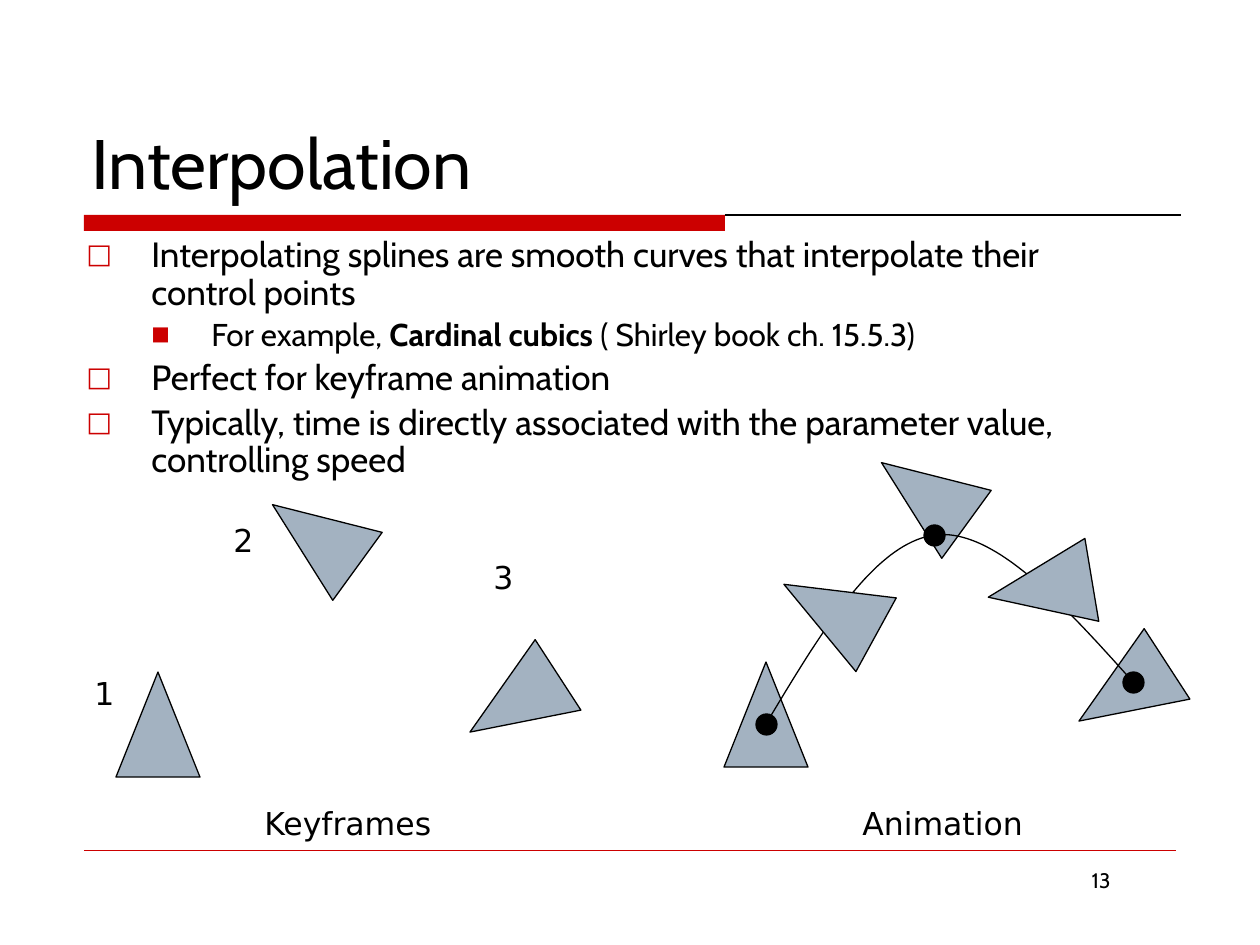
from lxml import etree
from pptx import Presentation
from pptx import util as u
from pptx.dml.color import RGBColor
from pptx.enum import shapes, text
from pptx.oxml.ns import qn

SCALE = 914400 / 126  # EMU per px
BLACK = RGBColor(0x00, 0x00, 0x00)
RED = RGBColor(0xCC, 0x00, 0x00)
STEEL = RGBColor(0xA3, 0xB2, 0xC1)


def emu(*lengths):
    return [u.Emu(round(px * SCALE)) for px in lengths]


def add_text(place, words, size, font, wrap=True):
    box = page.shapes.add_textbox(*emu(*place))
    box.text_frame.word_wrap = wrap
    para = box.text_frame.paragraphs[0]
    para.text = words
    para.font.size, para.font.name = u.Pt(size), font
    para.font.color.rgb = BLACK
    return box


deck = Presentation()
deck.slide_width, deck.slide_height = emu(1260, 945)
page = deck.slides.add_slide(deck.slide_layouts[6])

# Title bar and rules
bar = page.shapes.add_shape(shapes.MSO_SHAPE.RECTANGLE, *emu(84, 215, 641, 16))
bar.shadow.inherit = False
bar.fill.solid()
bar.fill.fore_color.rgb = RED
bar.line.fill.background()
for left, right, y, color, width in [(725, 1181, 215, BLACK, 0.75), (84, 1176, 850, RED, 0.25)]:
    rule = page.shapes.add_connector(shapes.MSO_CONNECTOR.STRAIGHT, *emu(left, y, right, y))
    rule.line.color.rgb, rule.line.width = color, u.Pt(width)
    etree.SubElement(rule._element.spPr, qn("a:effectLst"))

# Title
title = add_text((79, 42, 1103, 168), "Interpolation", 40, "Cabin")
title.text_frame.vertical_anchor = text.MSO_ANCHOR.BOTTOM

# Bulleted body: level, runs of (words, bold)
points = [
    (0, [("Interpolating splines are smooth curves that interpolate their control points", False)]),
    (1, [("For example, ", False), ("Cardinal cubics ", True), ("( Shirley book ch. 15.5.3)", False)]),
    (0, [("Perfect for keyframe animation", False)]),
    (0, [("Typically, time is directly associated with the parameter value, controlling speed", False)]),
]
# Size, margin, hanging indent, bullet, bullet percent for each level
levels = [(20, 65, -65, "□", 78), (18, 125, -60, "■", 62)]
body = page.shapes.add_textbox(*emu(74, 231, 1071, 242))
frame = body.text_frame
frame.word_wrap = True
for number, (level, runs) in enumerate(points):
    size, margin, indent, bullet, percent = levels[level]
    para = frame.add_paragraph() if number else frame.paragraphs[0]
    para.level, para.line_spacing, para.space_before = level, 0.9, u.Pt(size / 5)
    para.font.size, para.font.name = u.Pt(size), "Cabin"
    para.font.color.rgb = BLACK
    for words, bold in runs:
        span = para.add_run()
        span.text, span.font.bold = words, bold
    props = para._p.get_or_add_pPr()
    props.set("marL", str(emu(margin)[0]))
    props.set("indent", str(emu(indent)[0]))
    marks = [
        etree.Element(qn("a:buClr")),
        etree.Element(qn("a:buSzPct"), val=str(percent * 1000)),
        etree.Element(qn("a:buFont"), typeface="DejaVu Sans"),
        etree.Element(qn("a:buChar"), char=bullet),
    ]
    etree.SubElement(marks[0], qn("a:srgbClr"), val=str(RED))
    default = props.find(qn("a:defRPr"))
    for mark in marks:
        default.addprevious(mark)

# Keyframe triangles and dots, the motion curve, then the in-between triangles
TRIANGLE, DOT = shapes.MSO_SHAPE.ISOSCELES_TRIANGLE, shapes.MSO_SHAPE.OVAL
keyframes = [(882, 441, 306), (116, 672, 0), (273, 483, 306), (472, 651, 237),
             (724, 662, 0), (1081, 640, 237)]
dots = [(756, 714), (924, 525), (1123, 672)]
between = [(788, 557, 298.7), (998, 536, 260.5)]
figures = [(TRIANGLE, x, y, 84, 105, turn, STEEL) for x, y, turn in keyframes]
figures += [(DOT, x, y, 21, 21, 0, BLACK) for x, y in dots]
figures += [None]
figures += [(TRIANGLE, x, y, 84, 105, turn, STEEL) for x, y, turn in between]

# Two cubic Bezier pieces, sampled finely
pieces = [((766, 724), (820, 634), (874, 543), (935, 535)),
          ((935, 535), (995, 528), (1065, 606), (1134, 683))]
STEPS = 40
trail = []
for a, b, c, d in pieces:
    for step in range(1, STEPS + 1):
        t = step / STEPS
        s = 1 - t
        trail.append([SCALE * (s**3 * a[i] + 3 * s * s * t * b[i] + 3 * s * t * t * c[i] + t**3 * d[i])
                      for i in (0, 1)])

for figure in figures:
    if figure is None:
        pen = page.shapes.build_freeform(*emu(*pieces[0][0]))
        pen.add_line_segments(trail, close=False)
        shape = pen.convert_to_shape()
        shape.fill.background()
    else:
        kind, x, y, width, height, turn, color = figure
        shape = page.shapes.add_shape(kind, *emu(x, y, width, height))
        shape.rotation = turn
        shape.fill.solid()
        shape.fill.fore_color.rgb = color
    shape.shadow.inherit = False
    shape.line.color.rgb, shape.line.width = BLACK, u.Pt(0.75)

# Labels
for words, x, y, width in [("1", 82, 668, 47), ("2", 221, 515, 47), ("3", 481, 552, 47),
                           ("Keyframes", 252, 798, 209), ("Animation", 850, 798, 204)]:
    add_text((x, y, width, 63), words, 18, "DejaVu Sans", wrap=False)

# Page number
footer = add_text((850, 861, 273, 66), "13", 12, "Cabin")
footer.text_frame.paragraphs[0].alignment = text.PP_ALIGN.RIGHT

deck.save("out.pptx")
